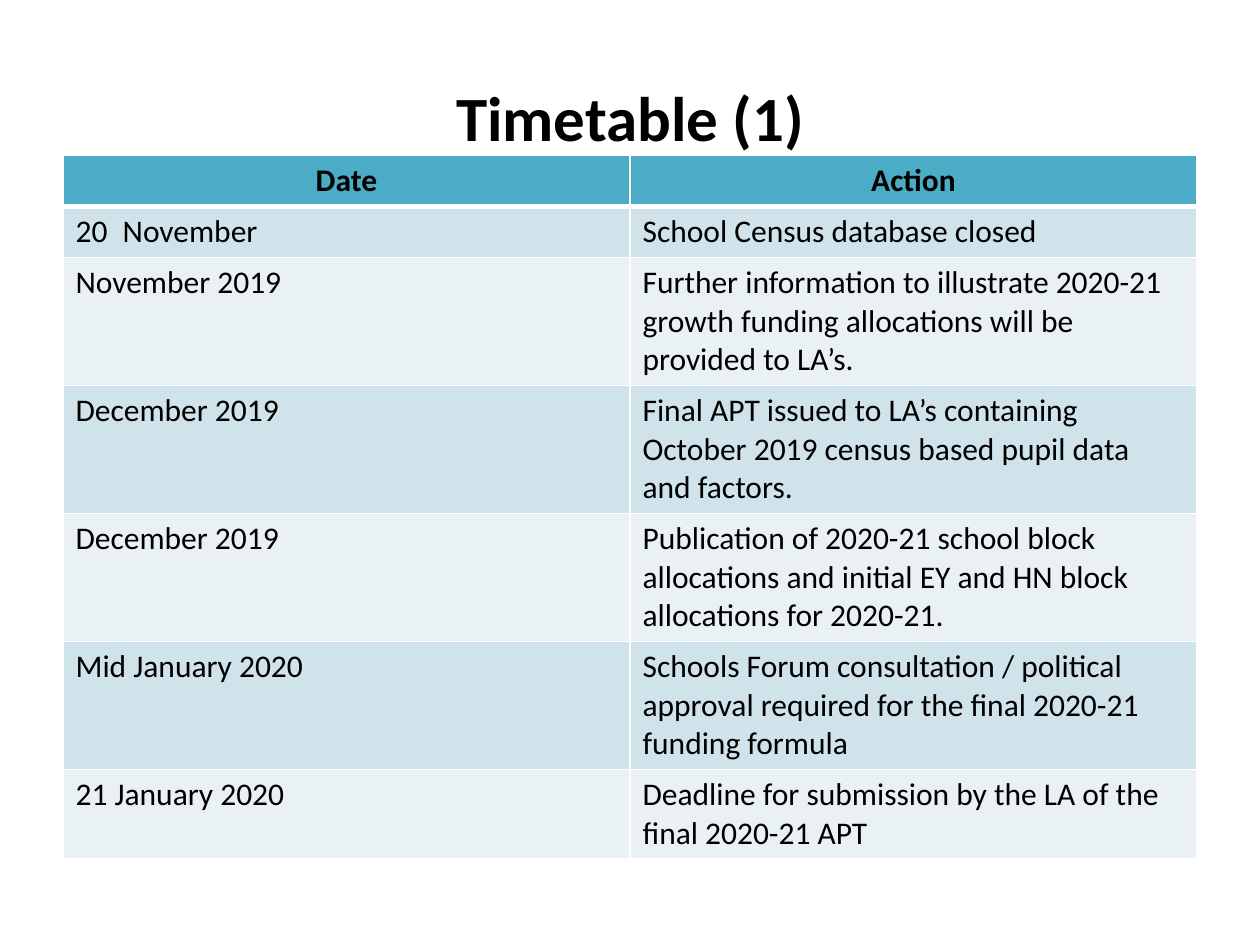
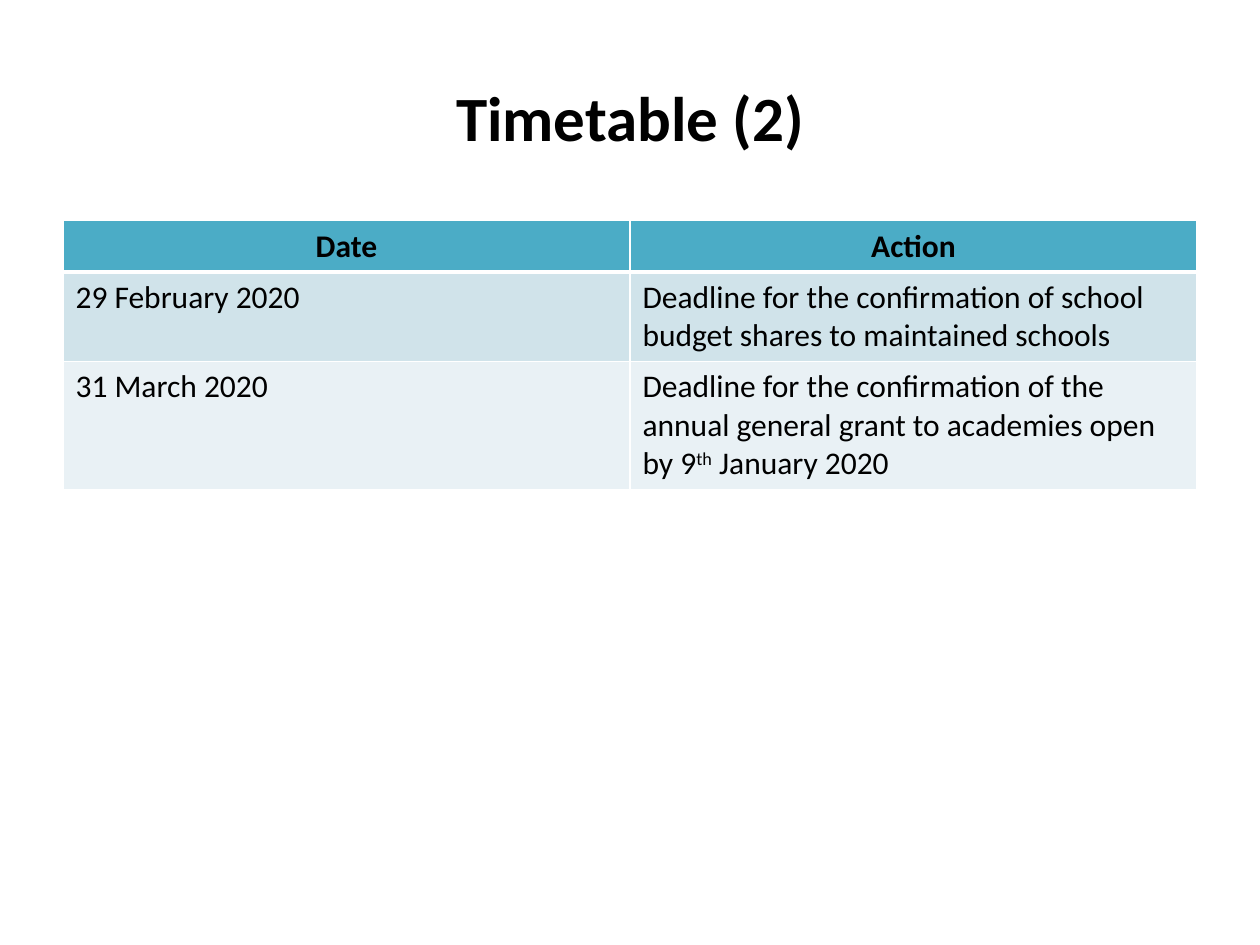
import dataclasses

import lxml.etree
import pptx
import pptx.dml.color
import pptx.enum.text
import pptx.oxml.ns
import pptx.util

Cm = pptx.util.Cm
Pt = pptx.util.Pt
qn = pptx.oxml.ns.qn
CENTER = pptx.enum.text.PP_ALIGN.CENTER


@dataclasses.dataclass(frozen=True)
class Theme:
    font: str = "Calibri"
    text: str = "000000"
    header: str = "4BACC6"
    bands: tuple = ("D0E3EA", "E9F1F5")
    border: str = "FFFFFF"
    title_size: int = 36
    table_size: int = 18
    thin: int = 1
    thick: int = 3


THEME = Theme()
LEFT, WIDTH = Cm(1.27), Cm(22.86)
ROW_HEIGHT = Cm(1.03)
HEADINGS = ("Date", "Action")

FIRST_DATES = [
    ("November", "School Census database closed"),
    ("November 2019", "Further information to illustrate 2020-21 growth funding "
                      "allocations will be provided to LA’s."),
    ("December 2019", "Final APT issued to LA’s containing October 2019 census "
                      "based pupil data and factors."),
    ("December 2019", "Publication of 2020-21 school block allocations and initial "
                      "EY and HN block allocations for 2020-21."),
    ("Mid January 2020", "Schools Forum consultation / political approval required "
                         "for the final 2020-21 funding formula"),
    ("21 January 2020", "Deadline for submission by the LA of the final 2020-21 APT"),
]
LATER_DATES = [
    ("29 February 2020", "Deadline for the confirmation of school budget shares to "
                         "maintained schools"),
    ("31 March 2020", "Deadline for the confirmation of the annual general grant to "
                      "academies open by 9"),
]


def rgb(value):
    return pptx.dml.color.RGBColor.from_string(value)


def style_paragraph(paragraph, size, bold):
    font = paragraph.font
    font.name, font.size, font.bold = THEME.font, Pt(size), bold
    font.color.rgb = rgb(THEME.text)


def add_titled_slide(deck, title_text):
    slide = deck.slides.add_slide(deck.slide_layouts[5])
    title = slide.shapes.title
    title.left, title.top, title.width, title.height = LEFT, Cm(0.76), WIDTH, Cm(3.18)
    title.text_frame.text = title_text
    title.text_frame.vertical_anchor = pptx.enum.text.MSO_ANCHOR.MIDDLE
    paragraph = title.text_frame.paragraphs[0]
    paragraph.alignment = CENTER
    style_paragraph(paragraph, THEME.title_size, True)
    return slide


def set_borders(cell, top, bottom):
    """Draw all four cell borders; call before setting the fill, which follows them."""
    properties = cell._tc.get_or_add_tcPr()
    widths = {"lnL": THEME.thin, "lnR": THEME.thin, "lnT": top, "lnB": bottom}
    for side, width in widths.items():
        line = lxml.etree.SubElement(properties, qn(f"a:{side}"), w=str(Pt(width)))
        fill = lxml.etree.SubElement(line, qn("a:solidFill"))
        lxml.etree.SubElement(fill, qn("a:srgbClr"), val=THEME.border)


def fill_cell(cell, text, row):
    is_header = row == 0
    set_borders(cell,
                top=THEME.thick if row == 1 else THEME.thin,
                bottom=THEME.thick if is_header else THEME.thin)
    cell.fill.solid()
    cell.fill.fore_color.rgb = rgb(THEME.header if is_header else THEME.bands[(row - 1) % 2])
    cell.text = text
    paragraph = cell.text_frame.paragraphs[0]
    if is_header:
        paragraph.alignment = CENTER
    style_paragraph(paragraph, THEME.table_size, is_header)


def add_timetable(slide, top, dates):
    rows = [HEADINGS, *dates]
    table = slide.shapes.add_table(len(rows), len(HEADINGS), LEFT, top, WIDTH,
                                   ROW_HEIGHT * len(rows)).table
    for row, texts in enumerate(rows):
        for column, text in enumerate(texts):
            fill_cell(table.cell(row, column), text, row)
    return table


def number_cell(cell, start):
    """Turn the cell's text into a list item numbered from start, without a full stop."""
    properties = cell.text_frame.paragraphs[0]._p.get_or_add_pPr()
    indent = Cm(0.95)
    properties.set("marL", str(indent))
    properties.set("indent", str(-indent))
    numbering = lxml.etree.Element(qn("a:buAutoNum"), type="arabicPlain", startAt=str(start))
    properties.insert(0, numbering)


def append_ordinal(cell, suffix, rest):
    """Add a raised suffix and the text after it to the cell."""
    paragraph = cell.text_frame.paragraphs[0]
    raised = paragraph.add_run()
    raised.text = suffix
    raised._r.get_or_add_rPr().set("baseline", "30000")
    paragraph.add_run().text = rest


def main():
    deck = pptx.Presentation()
    deck.slide_width, deck.slide_height = Cm(25.4), Cm(19.05)

    first = add_titled_slide(deck, "Timetable (1)")
    first_table = add_timetable(first, Cm(3.13), FIRST_DATES)
    number_cell(first_table.cell(1, 0), 20)

    second = add_titled_slide(deck, "Timetable (2)")
    second_table = add_timetable(second, Cm(4.45), LATER_DATES)
    append_ordinal(second_table.cell(2, 1), "th", " January 2020")

    deck.save("out.pptx")


if __name__ == "__main__":
    main()
